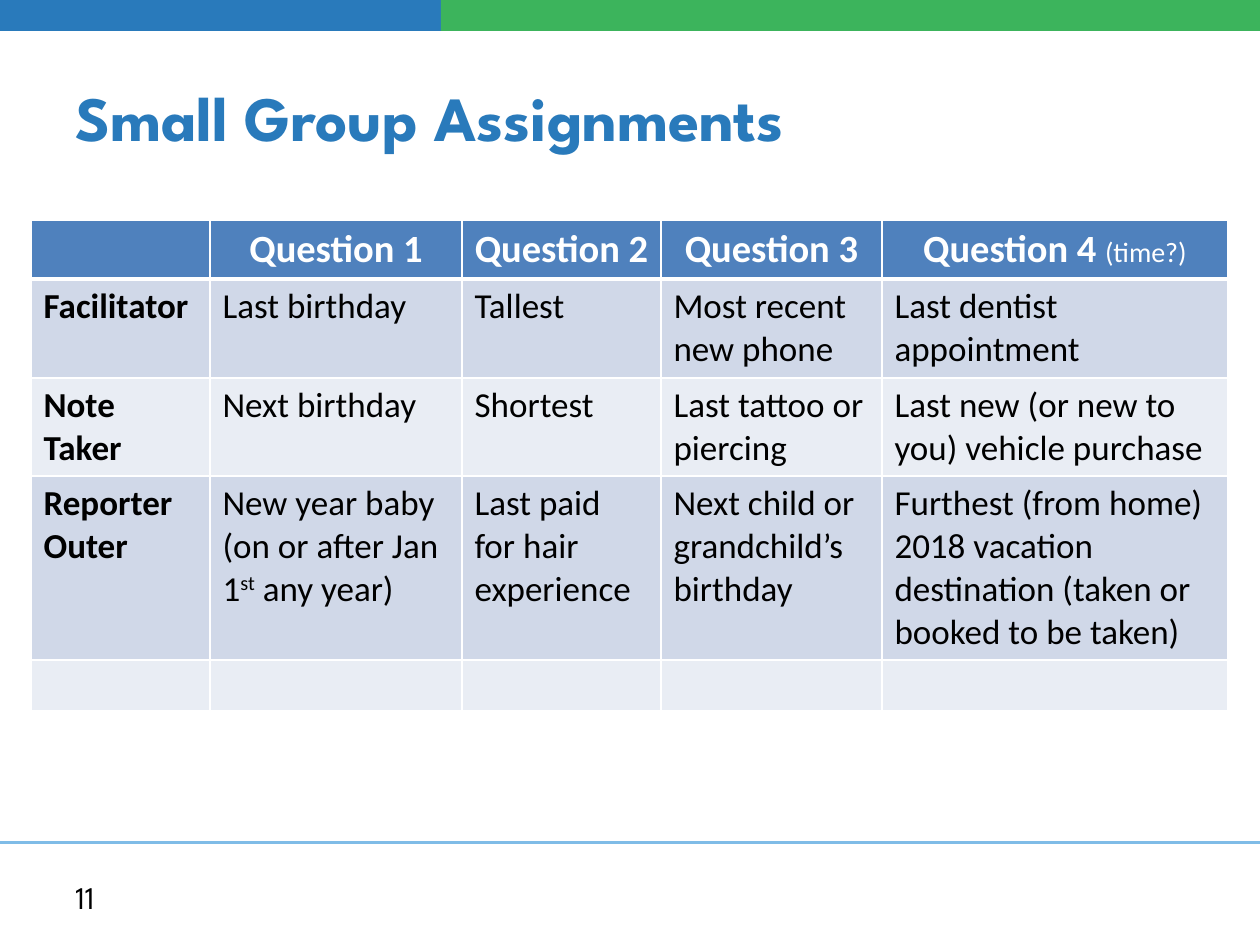
from lxml import etree
from pptx import Presentation
from pptx import util as u
from pptx.dml.color import RGBColor
from pptx.enum import shapes, text
from pptx.oxml.ns import qn

SCALE = 914400 / 126  # EMU per px
BLUE, GREEN, RULE = "297ABB", "3CB45C", "7FBCE7"
HEADER, BANDS = "4F81BD", ("D0D8E8", "E9EDF4")
WHITE, BLACK = "FFFFFF", "000000"

COLUMNS = (179, 252, 199, 221, 346)
ROWS = (58, 99, 98, 184, 51)
# A cell is a list of (text, format) runs, or plain text
ASSIGNMENTS = (
    ("", "Question 1", "Question 2", "Question 3",
     [("Question 4 ", {}), ("(time?)", {"size": u.Pt(16), "bold": False})]),
    ("Facilitator", "Last birthday", "Tallest", "Most recent new phone",
     "Last dentist appointment"),
    ("Note Taker", "Next birthday", "Shortest", "Last tattoo or piercing",
     "Last new (or new to you) vehicle purchase"),
    ("Reporter Outer",
     [("New year baby (on or after Jan 1", {}), ("st", {"baseline": 30000}),
      (" any year)", {})],
     "Last paid for hair experience", "Next child or grandchild’s birthday",
     "Furthest (from home) 2018 vacation destination (taken or booked to be taken)"),
    ("",) * 5,
)


def px(*lengths):
    return [u.Emu(round(n * SCALE)) for n in lengths]


def rgb(value):
    return RGBColor.from_string(value)


def add_run(p, words, color, **formats):
    r = p.add_run()
    r.text = words
    baseline = formats.pop("baseline", None)
    for name, value in formats.items():
        setattr(r.font, name, value)
    r.font.color.rgb = rgb(color)
    if baseline:
        r._r.get_or_add_rPr().set("baseline", str(baseline))


def add_label(s, box, words, color, **formats):
    tf = s.shapes.add_textbox(*px(*box)).text_frame
    tf.word_wrap = True
    tf.vertical_anchor = text.MSO_ANCHOR.MIDDLE
    add_run(tf.paragraphs[0], words, color, name="League Spartan", **formats)


def add_top_band(s, box):
    # Both bars bleed over the top edge; green overlaps blue
    left, top, width, height = box
    split = width * 35 // 100
    for x, w, color in ((left, width // 2, BLUE),
                        (left + split, width - split, GREEN)):
        sp = s.shapes.add_shape(shapes.MSO_SHAPE.RECTANGLE, *px(x, top, w, height))
        sp.shadow.inherit = False
        sp.fill.solid()
        sp.fill.fore_color.rgb = rgb(color)
        sp.line.fill.background()


def add_footer(s, box):
    left, top, width, height = box
    rule = s.shapes.add_connector(shapes.MSO_CONNECTOR.STRAIGHT,
                                  *px(left, top, left + width, top))
    rule.line.color.rgb = rgb(RULE)
    rule.line.width = u.Pt(1.75)
    etree.SubElement(rule._element.spPr, qn("a:effectLst"))
    add_label(s, (left + 63, top + 29, 294, 50), "11", BLACK, size=u.Pt(18))


def set_borders(cell, **widths):
    tcPr = cell._tc.get_or_add_tcPr()
    for side in "LRTB":
        ln = etree.SubElement(tcPr, qn("a:ln" + side),
                              w=str(u.Pt(widths.get(side, 1))))
        fill = etree.SubElement(ln, qn("a:solidFill"))
        etree.SubElement(fill, qn("a:srgbClr"), val=WHITE)


def add_assignments(s, box):
    table = s.shapes.add_table(len(ROWS), len(COLUMNS), *px(*box)).table
    for column, width in zip(table.columns, px(*COLUMNS)):
        column.width = width
    for row, height in zip(table.rows, px(*ROWS)):
        row.height = height
    for i, entries in enumerate(ASSIGNMENTS):
        head = i == 0
        for j, entry in enumerate(entries):
            cell = table.cell(i, j)
            set_borders(cell, T=3 if i == 1 else 1, B=3 if head else 1)
            cell.fill.solid()
            cell.fill.fore_color.rgb = rgb(HEADER if head else BANDS[(i - 1) % 2])
            if not entry:
                continue
            p = cell.text_frame.paragraphs[0]
            if head:
                p.alignment = text.PP_ALIGN.CENTER
            base = {"name": "Calibri", "size": u.Pt(22 if head else 20),
                    "bold": head or j == 0}
            runs = [(entry, {})] if isinstance(entry, str) else entry
            for words, formats in runs:
                add_run(p, words, WHITE if head else BLACK, **{**base, **formats})


def main():
    prs = Presentation()
    prs.slide_width, prs.slide_height = px(1260, 945)
    s = prs.slides.add_slide(prs.slide_layouts[6])
    add_top_band(s, (0, -158, 1260, 189))
    add_footer(s, (0, 843, 1260, 102))
    # Title
    add_label(s, (63, 38, 1134, 157), "Small Group Assignments", BLUE,
              size=u.Pt(36), bold=True)
    add_assignments(s, (31, 220, sum(COLUMNS), sum(ROWS)))
    prs.save("out.pptx")


if __name__ == "__main__":
    main()
